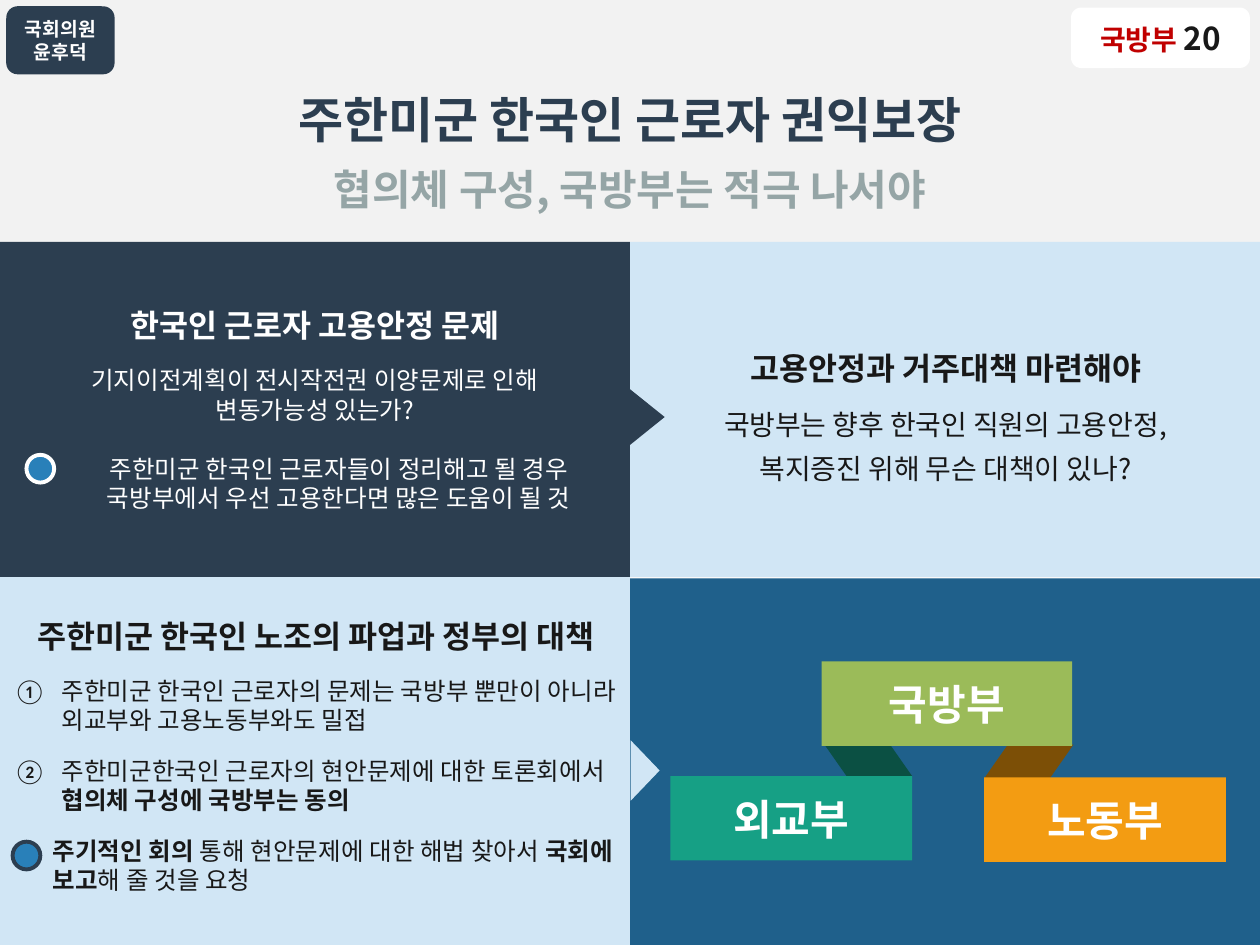
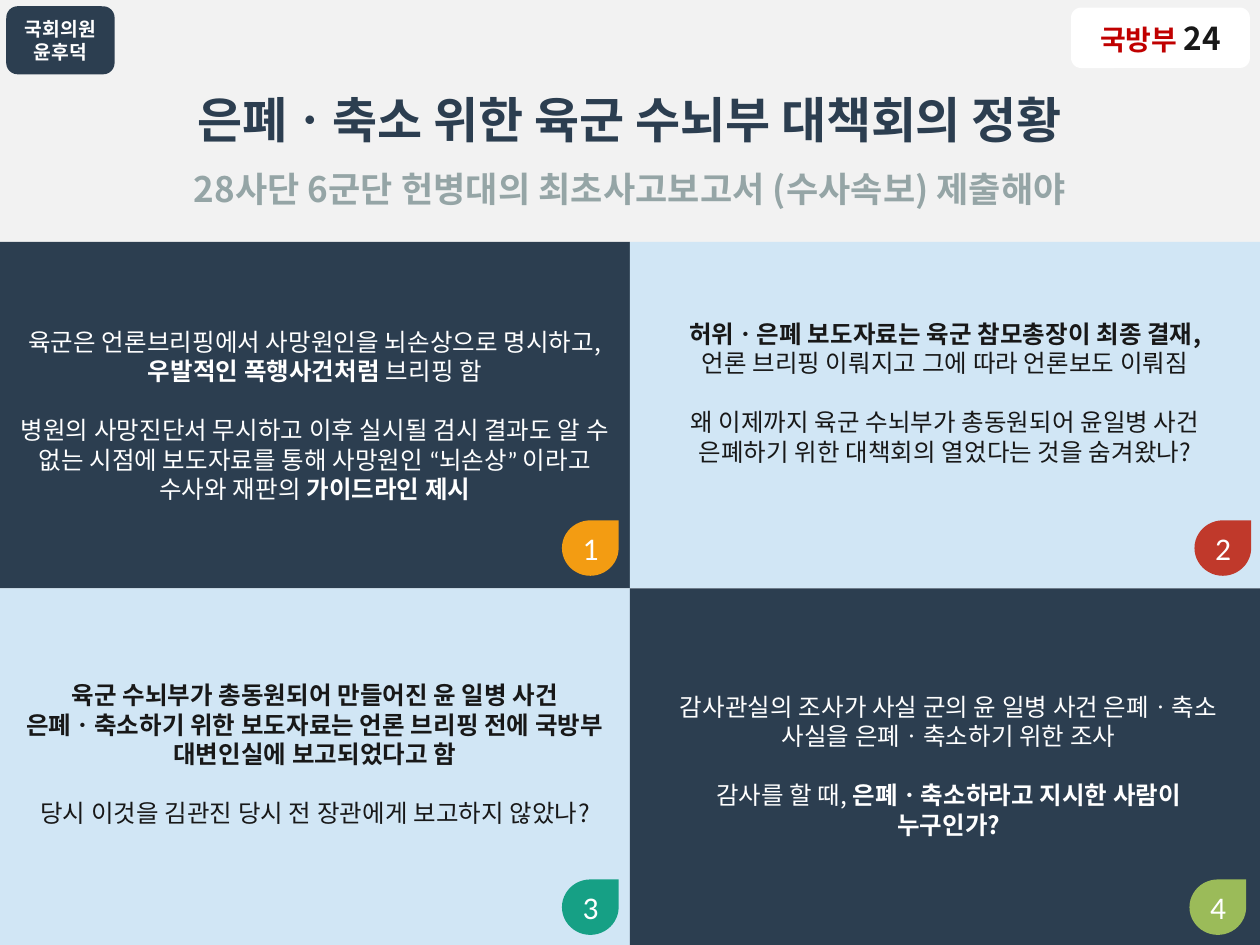
"""Build two briefing slides on defence ministry questions."""
from dataclasses import dataclass
from typing import Optional

from lxml import etree
from pptx import Presentation
from pptx.dml.color import RGBColor
from pptx.enum.lang import MSO_LANGUAGE_ID
from pptx.enum.shapes import MSO_SHAPE
from pptx.enum.text import MSO_ANCHOR, PP_ALIGN
from pptx.oxml.ns import qn
from pptx.util import Inches, Pt

RECT = MSO_SHAPE.RECTANGLE
ROUND = MSO_SHAPE.ROUNDED_RECTANGLE
TRI = MSO_SHAPE.ISOSCELES_TRIANGLE
SLANT = MSO_SHAPE.PARALLELOGRAM
DROP = MSO_SHAPE.TEAR
OVAL = MSO_SHAPE.OVAL
LEFT, CENTER = PP_ALIGN.LEFT, PP_ALIGN.CENTER
TOP, MIDDLE = MSO_ANCHOR.TOP, MSO_ANCHOR.MIDDLE
KOREAN = MSO_LANGUAGE_ID.KOREAN

SANS, LATIN = "Noto Sans CJK KR", "Calibri"
NAVY, PALE, WHITE, INK = "2C3E50", "D1E6F5", "FFFFFF", "181818"
GRAY, BAND, PAPER, RED = "95A5A6", "F2F2F2", "F9F9F9", "C00000"
TEAL, GOLD, LIME, BRICK = "16A085", "F39C12", "9BBB59", "C0392B"
BLUE, DEEP = "2980B9", "1F608B"
HALF, EDGE = 5, 1.92
LINE = 17


@dataclass
class Run:
    """A stretch of text with its own format."""
    text: str
    bold: bool = False
    size: Optional[float] = None
    color: Optional[str] = None


@dataclass
class Para:
    """A paragraph of runs."""
    runs: list[Run]
    size: float = 14
    gap: float = 0
    indent: float = 0
    number: bool = False
    align: PP_ALIGN = CENTER


@dataclass
class Box:
    """A filled preset shape."""
    kind: MSO_SHAPE
    left: float
    top: float
    width: float
    height: float
    fill: str
    line: Optional[str] = None
    turn: float = 0
    flip: bool = False
    slant: Optional[float] = None


def color(code: str) -> RGBColor:
    """Turn a hex string into a colour."""
    return RGBColor.from_string(code)


def plain(text: str, bold: bool = False, **form) -> Para:
    """Make a paragraph of a single run."""
    return Para([Run(text, bold)], **form)


def write(shape, text, *, ink: str = INK, font: str = SANS,
          anchor: MSO_ANCHOR = MIDDLE, foot: float = 0.05) -> None:
    """Fill a shape with formatted paragraphs."""
    frame = shape.text_frame
    frame.word_wrap = True
    frame.vertical_anchor = anchor
    frame.margin_bottom = Inches(foot)
    for i, item in enumerate(text):
        para = frame.paragraphs[0] if i == 0 else frame.add_paragraph()
        props = para._p.get_or_add_pPr()
        if item.indent:
            props.set("marL", str(Inches(item.indent)))
            props.set("indent", str(-Inches(item.indent) if item.number else 0))
        if item.number:
            mark = etree.SubElement(props, qn("a:buAutoNum"))
            mark.set("type", "circleNumDbPlain")
        para.alignment = item.align
        para.space_after = Pt(item.gap)
        for part in item.runs:
            run = para.add_run()
            run.text = part.text
            run.font.size = Pt(part.size or item.size)
            run.font.bold = part.bold
            run.font.color.rgb = color(part.color or ink)
            run.font.name = font
            run.font.language_id = KOREAN
            east = etree.SubElement(run._r.get_or_add_rPr(), qn("a:ea"))
            east.set("typeface", LATIN)


def draw(slide, box: Box):
    """Draw a preset shape."""
    spot = map(Inches, (box.left, box.top, box.width, box.height))
    shape = slide.shapes.add_shape(box.kind, *spot)
    shape.shadow.inherit = False
    shape.fill.solid()
    shape.fill.fore_color.rgb = color(box.fill)
    if box.line:
        shape.line.color.rgb = color(box.line)
        shape.line.width = Pt(2.25)
    else:
        shape.line.fill.background()
    shape.rotation = box.turn
    if box.flip:
        shape._element.spPr.xfrm.set("flipH", "1")
    if box.slant:
        shape.adjustments[0] = box.slant
    return shape


def label(slide, left: float, top: float, width: float, height: float,
          text: list[Para], **form) -> None:
    """Add a text box."""
    spot = map(Inches, (left, top, width, height))
    write(slide.shapes.add_textbox(*spot), text, **form)


def start(deck, number: str, title: str, lead: str, size: float):
    """Add a slide with its shared header."""
    slide = deck.slides.add_slide(deck.slide_layouts[6])
    slide.background.fill.solid()
    slide.background.fill.fore_color.rgb = color(PAPER)
    draw(slide, Box(RECT, 0, 0, 10, 2, BAND))
    member = draw(slide, Box(ROUND, 0.05, 0.05, 0.86, 0.54, NAVY))
    write(member, [plain(t, True, size=11) for t in ("국회의원", "윤후덕")],
          ink=WHITE)
    label(slide, 0, 0.66, 10, 0.57, [plain(title, True, size=28)],
          ink=NAVY, anchor=MIDDLE)
    label(slide, 0, 1.26, 10, 0.48, [plain(lead, True, size=size)],
          ink=GRAY, anchor=MIDDLE)
    badge = draw(slide, Box(ROUND, 8.5, 0.06, 1.42, 0.48, WHITE))
    write(badge, [Para([Run("국방부 ", True, 16, RED), Run(number, True, 18)])])
    return slide


def labor(deck) -> None:
    """Build the slide on Korean base workers."""
    slide = start(deck, "20", "주한미군 한국인 근로자 권익보장",
                  "협의체 구성, 국방부는 적극 나서야", 24)
    draw(slide, Box(RECT, HALF, EDGE, HALF, 2.66, PALE))
    draw(slide, Box(RECT, HALF, 4.59, HALF, 2.91, DEEP))
    issue = draw(slide, Box(RECT, 0, EDGE, HALF, 2.66, NAVY))
    write(issue, [
        plain("한국인 근로자 고용안정 문제", True, size=18, gap=12),
        plain("기지이전계획이 전시작전권 이양문제로 인해"),
        plain("변동가능성 있는가?", gap=LINE),
        plain("주한미군 한국인 근로자들이 정리해고 될 경우 "
              "국방부에서 우선 고용한다면 많은 도움이 될 것", indent=0.38),
    ], ink=WHITE)
    draw(slide, Box(RECT, 0, 4.58, HALF, 2.92, PALE))
    label(slide, 5.42, 2.72, 4.17, 1.58, [
        plain("고용안정과 거주대책 마련해야", True, size=18, gap=12),
        plain("국방부는 향후 한국인 직원의 고용안정,", size=16, gap=6),
        plain("복지증진 위해 무슨 대책이 있나?", size=16),
    ], anchor=TOP)
    step = dict(gap=12, indent=0.38, number=True, align=LEFT)
    label(slide, 0.01, 4.85, HALF, 2.6, [
        plain("주한미군 한국인 노조의 파업과 정부의 대책", True, size=18, gap=12),
        plain("주한미군 한국인 근로자의 문제는 국방부 뿐만이 "
              "아니라 외교부와 고용노동부와도 밀접", **step),
        Para([Run("주한미군한국인 근로자의 현안문제에 대한 토론회에서 "),
              Run("협의체 구성에 국방부는 동의", True)], **step),
        Para([Run("주기적인 회의 ", True),
              Run("통해 현안문제에 대한 해법 찾아서 "),
              Run("국회에 보고", True), Run("해 줄 것을 요청")],
             indent=0.31, align=LEFT),
    ], anchor=TOP)
    for box in (
        Box(TRI, 4.88, 6, 0.48, 0.23, PALE, turn=90),
        Box(TRI, 4.91, 3.17, 0.45, 0.28, NAVY, turn=90),
        Box(OVAL, 0.1, 6.68, 0.22, 0.22, BLUE, line=NAVY),
        Box(OVAL, 0.21, 3.61, 0.22, 0.22, BLUE, line=WHITE),
        Box(SLANT, 6.53, 5.89, 0.71, 0.27, "0B5043", flip=True, slant=0.7),
        Box(SLANT, 7.81, 5.91, 0.71, 0.27, "7C4F06", slant=0.7),
    ):
        draw(slide, box)
    for name, left, top, width, fill in (
        ("외교부", 5.32, 6.16, 1.92, TEAL),
        ("국방부", 6.52, 5.25, 1.99, LIME),
        ("노동부", 7.81, 6.17, 1.92, GOLD),
    ):
        office = draw(slide, Box(RECT, left, top, width, 0.67, fill))
        write(office, [plain(name, True, size=24)], ink=WHITE, font=LATIN)


def army(deck) -> None:
    """Build the slide on the army cover-up."""
    slide = start(deck, "24", "은폐ㆍ축소 위한 육군 수뇌부 대책회의 정황",
                  "28사단 6군단 헌병대의 최초사고보고서 (수사속보) 제출해야", 20)
    brief, false, report, audit = [
        draw(slide, Box(RECT, left, top, HALF, height, fill))
        for left, top, height, fill in (
            (0, EDGE, 2.75, NAVY), (HALF, EDGE, 2.75, PALE),
            (0, 4.67, 2.83, PALE), (HALF, 4.67, 2.83, NAVY))
    ]
    write(brief, [
        Para([Run("육군은 언론브리핑에서 사망원인을 뇌손상으로 명시하고, "),
              Run("우발적인 폭행사건처럼", True), Run(" 브리핑 함")], gap=LINE),
        Para([Run("병원의 사망진단서 무시하고 이후 실시될 검시 결과도 알 수 없는 "
                  "시점에 보도자료를 통해 사망원인 “뇌손상” 이라고 수사와 재판의 "),
              Run("가이드라인 제시", True)]),
    ], ink=WHITE)
    write(report, [
        plain("육군 수뇌부가 총동원되어 만들어진 윤 일병 사건 "
              "은폐ㆍ축소하기 위한 보도자료는 언론 브리핑 전에 국방부 "
              "대변인실에 보고되었다고 함", True, gap=LINE),
        plain("당시 이것을 김관진 당시 전 장관에게 보고하지 않았나?"),
    ], foot=0.25)
    label(slide, 5.24, 2.48, 4.52, 1.58, [
        Para([Run("허위ㆍ은폐 보도자료는 육군 참모총장이 최종 결재, ", True),
              Run("언론 브리핑 이뤄지고 그에 따라 언론보도 이뤄짐")], gap=LINE),
        plain("왜 이제까지 육군 수뇌부가 총동원되어 윤일병 사건 "
              "은폐하기 위한 대책회의 열었다는 것을 숨겨왔나?"),
    ], anchor=TOP)
    label(slide, 5.27, 5.44, 4.52, 1.5, [
        plain("감사관실의 조사가 사실 군의 윤 일병 사건 "
              "은폐ㆍ축소 사실을 은폐ㆍ축소하기 위한 조사", gap=LINE),
        Para([Run("감사를 할 때, "),
              Run("은폐ㆍ축소하라고 지시한 사람이 누구인가?", True)]),
    ], ink=WHITE, anchor=TOP)
    marks = ((4.46, 4.13, GOLD), (9.48, 4.13, BRICK),
             (4.46, 6.98, TEAL), (9.44, 6.98, LIME))
    for i, (left, top, fill) in enumerate(marks, 1):
        mark = draw(slide, Box(DROP, left, top, 0.45, 0.44, fill))
        write(mark, [plain(str(i), size=18)], ink=WHITE, font=LATIN)


def main() -> None:
    """Build and save the deck."""
    deck = Presentation()
    deck.slide_width, deck.slide_height = Inches(10), Inches(7.5)
    labor(deck)
    army(deck)
    deck.save("out.pptx")


if __name__ == "__main__":
    main()
